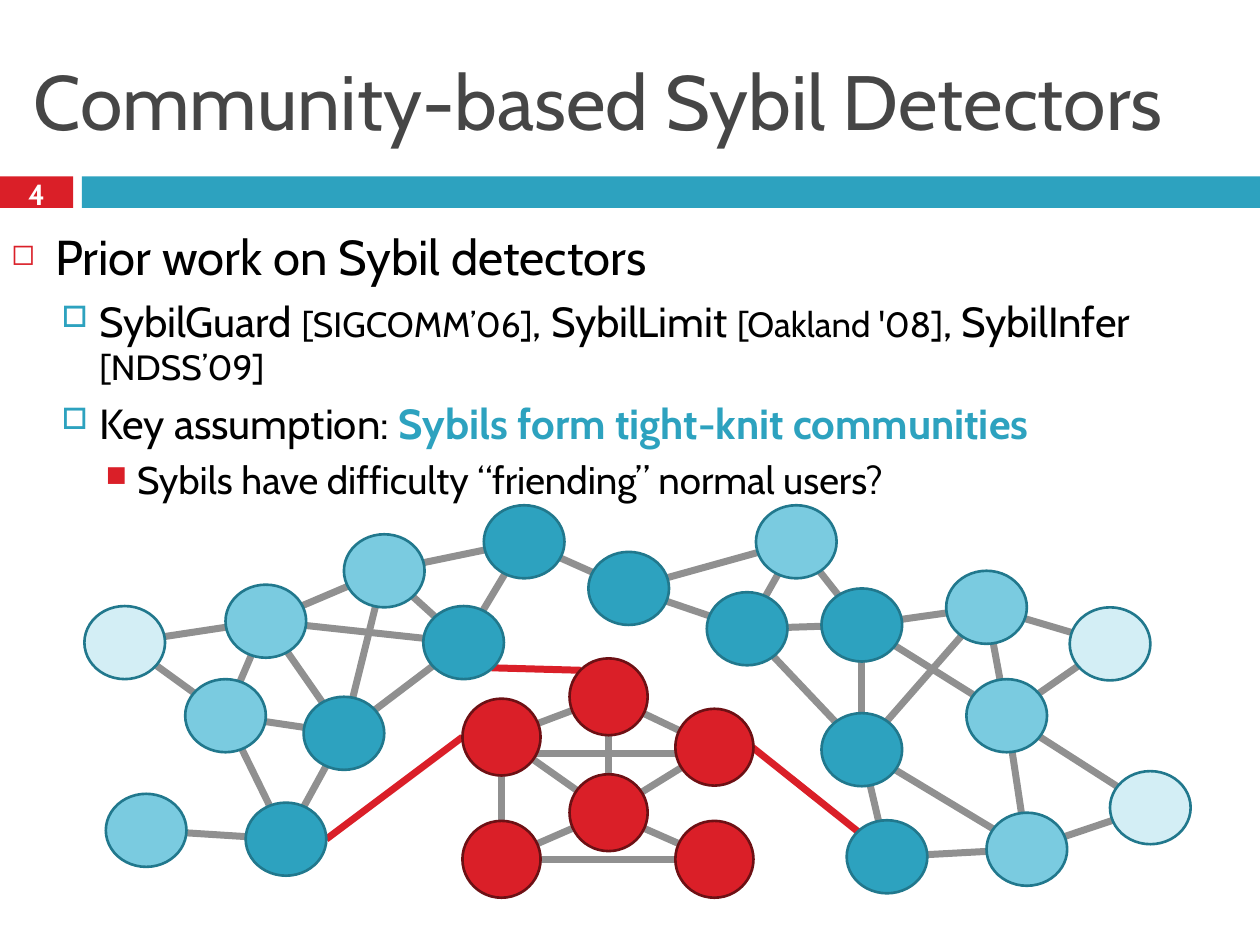
"""Build a slide on community-based Sybil detectors with a social network graph."""
from dataclasses import dataclass

from lxml.etree import SubElement
from pptx import Presentation
from pptx.dml.color import RGBColor
from pptx.enum.shapes import MSO_CONNECTOR, MSO_SHAPE
from pptx.enum.text import MSO_ANCHOR, PP_ALIGN
from pptx.oxml.ns import qn
from pptx.util import Inches, Pt


@dataclass(frozen=True)
class Theme:
    font: str = "Cabin"
    red: str = "DA1F28"
    dark_red: str = "6D1014"
    teal: str = "2DA2BF"
    dark_teal: str = "21788D"
    light_teal: str = "7ACBE0"
    pale_teal: str = "D3EEF5"
    gray: str = "909090"
    heading: str = "464646"
    black: str = "000000"
    white: str = "FFFFFF"
    title_size: float = 44
    number_size: float = 16.6
    topic_size: float = 28
    point_size: float = 24
    venue_size: float = 20
    detail_size: float = 22
    edge_width: float = 4
    outline_width: float = 1.5


THEME = Theme()

TITLE = [("Community-based Sybil Detectors", THEME.title_size, THEME.heading, False)]
NUMBER = [("4", THEME.number_size, THEME.white, True)]
BODY = [
    (0, [("Prior work on Sybil detectors", THEME.topic_size, THEME.black, False)]),
    (1, [
        ("SybilGuard ", THEME.point_size, THEME.black, False),
        ("[SIGCOMM’06]", THEME.venue_size, THEME.black, False),
        (", SybilLimit ", THEME.point_size, THEME.black, False),
        ("[Oakland '08]", THEME.venue_size, THEME.black, False),
        (", SybilInfer ", THEME.point_size, THEME.black, False),
        ("[NDSS’09]", THEME.venue_size, THEME.black, False),
    ]),
    (1, [
        ("Key assumption: ", THEME.point_size, THEME.black, False),
        ("Sybils form tight-knit communities", THEME.point_size, THEME.teal, True),
    ]),
    (2, [("Sybils have difficulty “friending” normal users?",
          THEME.detail_size, THEME.black, False)]),
]
LEVELS = [
    {"margin": 0.35, "hanging": 0.35, "before": 7, "bullet": "◻", "color": THEME.red, "percent": 60},
    {"margin": 0.7, "hanging": 0.3, "before": 5.5, "bullet": "□", "color": THEME.teal, "percent": 70},
    {"margin": 1, "hanging": 0.25, "before": 5, "bullet": "■", "color": THEME.red, "percent": 75},
]

USERS = {
    THEME.teal: {
        "A": (7.04, 6.8), "B": (6.84, 5.95), "C": (6.84, 4.96), "D": (5.93, 4.99),
        "E": (4.99, 4.67), "F": (4.16, 4.3), "G": (3.68, 5.1), "H": (2.73, 5.82),
        "I": (2.27, 6.66),
    },
    THEME.light_teal: {
        "J": (7.99, 5.68), "K": (8.15, 6.74), "L": (7.83, 4.82), "M": (6.32, 4.3),
        "N": (3.05, 4.53), "O": (2.11, 4.93), "P": (1.79, 5.68), "Q": (1.16, 6.59),
    },
    THEME.pale_teal: {"R": (8.81, 5.11), "S": (9.13, 6.41), "T": (0.99, 5.1)},
}
USER_EDGES = (
    "ED FE FG GN NF EM DM MC DC CL LR RJ LJ CJ CB BL DB JK JS KS BA BK AK "
    "NO GH OH NH OG OP PH PT TO HI PI QI"
).split()
SYBILS = {
    THEME.red: {
        "a": (5.67, 6.82), "b": (5.67, 5.93), "c": (3.98, 6.82),
        "d": (3.98, 5.85), "e": (4.83, 5.53), "f": (4.83, 6.45),
    },
}
SYBIL_EDGES = "de eb dc cf df fa fb fe ca".split() + [((3.98, 5.98), (5.67, 5.98))]
ATTACK_EDGES = [
    ((3.9, 5.3), (4.61, 5.32)),
    ((5.97, 5.93), (6.81, 6.6)),
    ((3.67, 5.85), (2.59, 6.66)),
]


def paint(shape, fill, outline=None):
    shape.shadow.inherit = False
    shape.fill.solid()
    shape.fill.fore_color.rgb = RGBColor.from_string(fill)
    if outline:
        shape.line.color.rgb = RGBColor.from_string(outline)
        shape.line.width = Pt(THEME.outline_width)
    else:
        shape.line.fill.background()


def add_bar(slide, left, top, width, height, fill):
    box = map(Inches, (left, top, width, height))
    paint(slide.shapes.add_shape(MSO_SHAPE.RECTANGLE, *box), fill)


def add_text_box(slide, left, top, width, height, anchor):
    frame = slide.shapes.add_textbox(*map(Inches, (left, top, width, height))).text_frame
    frame.word_wrap = True
    frame.vertical_anchor = anchor
    return frame


def write_runs(paragraph, runs):
    paragraph.font.name = THEME.font
    for text, size, color, bold in runs:
        run = paragraph.add_run()
        run.text = text
        run.font.name = THEME.font
        run.font.size = Pt(size)
        run.font.bold = bold
        run.font.color.rgb = RGBColor.from_string(color)


def set_bullet(paragraph, level):
    style = LEVELS[level]
    paragraph.level = level
    paragraph.space_before = Pt(style["before"])
    properties = paragraph._p.get_or_add_pPr()
    properties.set("marL", str(Inches(style["margin"])))
    properties.set("indent", str(-Inches(style["hanging"])))
    color = SubElement(properties, qn("a:buClr"))
    SubElement(color, qn("a:srgbClr"), val=style["color"])
    SubElement(properties, qn("a:buSzPct"), val=str(style["percent"] * 1000))
    SubElement(properties, qn("a:buChar"), char=style["bullet"])


def add_edge(group, start, end, color):
    connector = group.shapes.add_connector(
        MSO_CONNECTOR.STRAIGHT, *map(Inches, (*start, *end)))
    connector.line.color.rgb = RGBColor.from_string(color)
    connector.line.width = Pt(THEME.edge_width)
    SubElement(connector._element.spPr, qn("a:effectLst"))


def add_network(slide, nodes, edges, width, height, outline, edge_color):
    group = slide.shapes.add_group_shape()
    centers = {name: center for members in nodes.values() for name, center in members.items()}
    for start, end in edges:
        add_edge(group, centers.get(start, start), centers.get(end, end), edge_color)
    for fill, members in nodes.items():
        for x, y in members.values():
            box = map(Inches, (x - width / 2, y - height / 2, width, height))
            paint(group.shapes.add_shape(MSO_SHAPE.OVAL, *box), fill, outline)


def main():
    presentation = Presentation()
    presentation.slide_width, presentation.slide_height = Inches(10), Inches(7.5)
    slide = presentation.slides.add_slide(presentation.slide_layouts[6])

    add_bar(slide, 0, 1.4, 0.58, 0.25, THEME.red)
    add_bar(slide, 0.65, 1.4, 9.35, 0.25, THEME.teal)

    title = add_text_box(slide, 0.17, 0.25, 9.67, 1.08, MSO_ANCHOR.MIDDLE)
    write_runs(title.paragraphs[0], TITLE)

    body = add_text_box(slide, -0.01, 1.75, 10.04, 5.58, MSO_ANCHOR.TOP)
    for index, (level, runs) in enumerate(BODY):
        paragraph = body.add_paragraph() if index else body.paragraphs[0]
        set_bullet(paragraph, level)
        write_runs(paragraph, runs)

    number = add_text_box(slide, 0, 1.37, 0.58, 0.33, MSO_ANCHOR.MIDDLE)
    number.paragraphs[0].alignment = PP_ALIGN.CENTER
    write_runs(number.paragraphs[0], NUMBER)

    add_network(slide, {}, ATTACK_EDGES, 0, 0, THEME.red, THEME.red)
    add_network(slide, USERS, USER_EDGES, 0.64, 0.58, THEME.dark_teal, THEME.gray)
    add_network(slide, SYBILS, SYBIL_EDGES, 0.62, 0.61, THEME.dark_red, THEME.gray)
    presentation.save("out.pptx")


if __name__ == "__main__":
    main()
